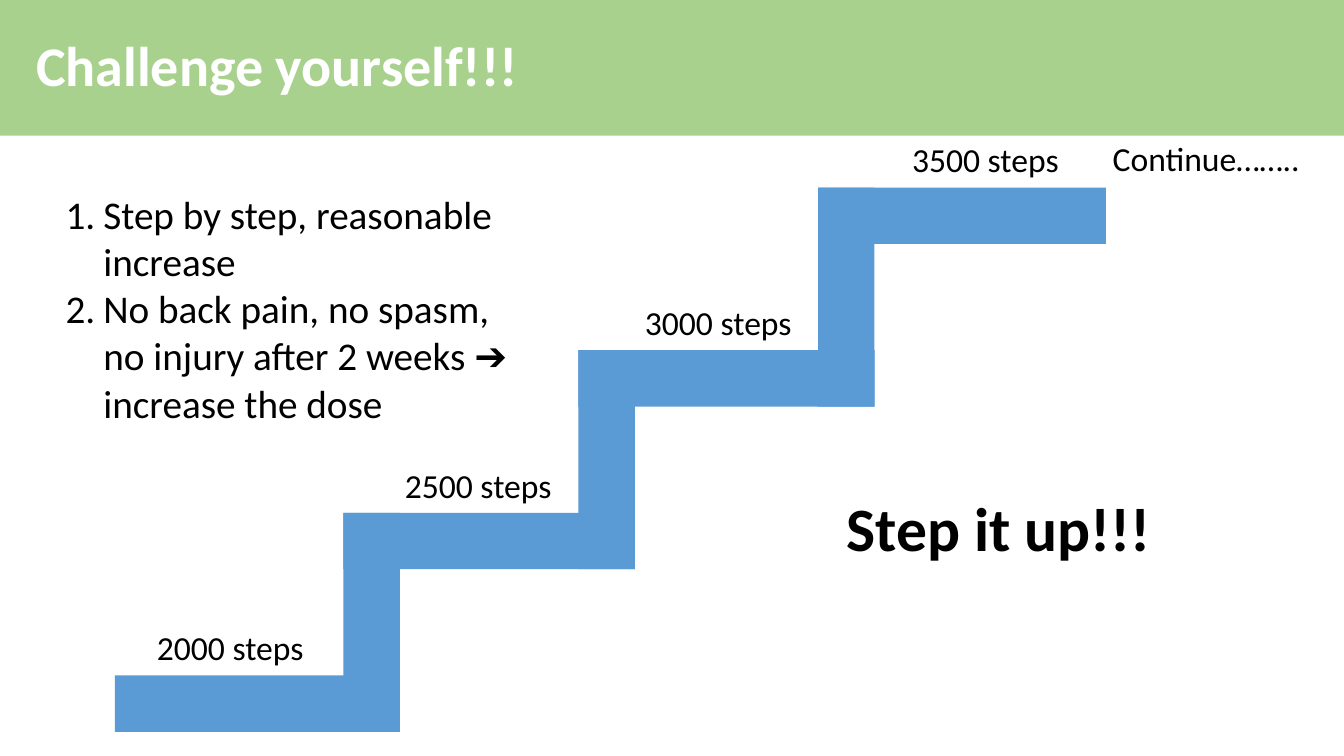
from pptx import Presentation
from pptx.dml.color import RGBColor
from pptx.enum import shapes, text
from pptx.oxml import ns, xmlchemy as xml
from pptx.util import Pt

HUES = {"band": "A9D18E", "stair": "5B9BD5", "ink": "000000", "white": "FFFFFF"}
FONT = "Calibri"


def style(frame, size, hue="ink", bold=False):
    for para in frame.paragraphs:
        for run in para.runs:
            run.font.name = FONT
            run.font.size = Pt(size)
            run.font.bold = bold
            run.font.color.rgb = RGBColor.from_string(HUES[hue])


def place(shape, box):
    shape.left, shape.top, shape.width, shape.height = map(Pt, box)


def add_bar(slide, box, hue):
    bar = slide.shapes.add_shape(shapes.MSO_SHAPE.RECTANGLE, *map(Pt, box))
    bar.shadow.inherit = False
    bar.fill.solid()
    bar.fill.fore_color.rgb = RGBColor.from_string(HUES[hue])
    bar.line.fill.background()
    return bar


def add_label(slide, box, words, size=24, bold=False):
    frame = slide.shapes.add_textbox(*map(Pt, box)).text_frame
    frame.word_wrap = False
    frame.text = words
    style(frame, size, bold=bold)


def add_header(slide, box, words):
    left, top, width, height = box
    band = add_bar(slide, box, "band")
    slide.shapes._spTree.insert(2, band._element)
    title = slide.shapes.title
    place(title, (left + 18.7, top + 15.8, width - 30.5, 65.5))
    frame = title.text_frame
    frame.text = words
    frame.vertical_anchor = text.MSO_ANCHOR.MIDDLE
    frame.auto_size = text.MSO_AUTO_SIZE.NONE
    frame.paragraphs[0].alignment = text.PP_ALIGN.LEFT
    frame.paragraphs[0].line_spacing = 0.9
    style(frame, 40, "white", True)


def add_rules(slide, box, rules):
    body = slide.placeholders[1]
    place(body, box)
    frame = body.text_frame
    frame.text = "\n".join(rules)
    frame.auto_size = text.MSO_AUTO_SIZE.NONE
    for para in frame.paragraphs:
        para.space_before = Pt(0)
        props = para._p.get_or_add_pPr()
        props.set("marL", str(Pt(27)))
        props.set("indent", str(-Pt(27)))
        mark = xml.OxmlElement("a:buAutoNum")
        mark.set("type", "arabicPeriod")
        props.append(mark)
    style(frame, 28)


def add_stairs(slide, box, goals):
    left, top, width, height = box
    thick = 40.3
    rise = (height - thick) / (len(goals) - 1)
    edges = [left, left + 163.3, left + 331.2, left + 502.4, left + width - thick]
    insets = (23, 36.8, 40.4, 60)
    for i, (goal, inset) in enumerate(zip(goals, insets)):
        x, end = edges[i], edges[i + 1] + thick
        y = top + height - thick - i * rise
        add_bar(slide, (x, y, end - x, thick), "stair")
        if i:
            add_bar(slide, (x, y, thick, rise + thick), "stair")
        add_label(slide, (x + inset, y - 38, 120, 36), goal)


def build(slide, box):
    left, top, width, height = box
    add_header(slide, (left, top, width, 97), "Challenge yourself!!!")
    add_rules(slide, (left + 39.6, top + 132.5, 337, 177), [
        "Step by step, reasonable increase",
        "No back pain, no spasm, no injury after 2 weeks ➔ increase the dose",
    ])
    goals = [f"{count} steps" for count in range(2000, 3501, 500)]
    add_stairs(slide, (left + 82, top + 134, 708, 388.8), goals)
    add_label(slide, (left + 787.7, top + 95, 150, 36), "Continue……..")
    add_label(slide, (left + 597.6, top + 346.3, 244, 60.5), "Step it up!!!", 44, True)


def main():
    deck = Presentation()
    deck.slide_width, deck.slide_height = Pt(960), Pt(540)
    slide = deck.slides.add_slide(deck.slide_layouts[1])
    build(slide, (0, 0, 960, 540))
    deck.save("out.pptx")


if __name__ == "__main__":
    main()
